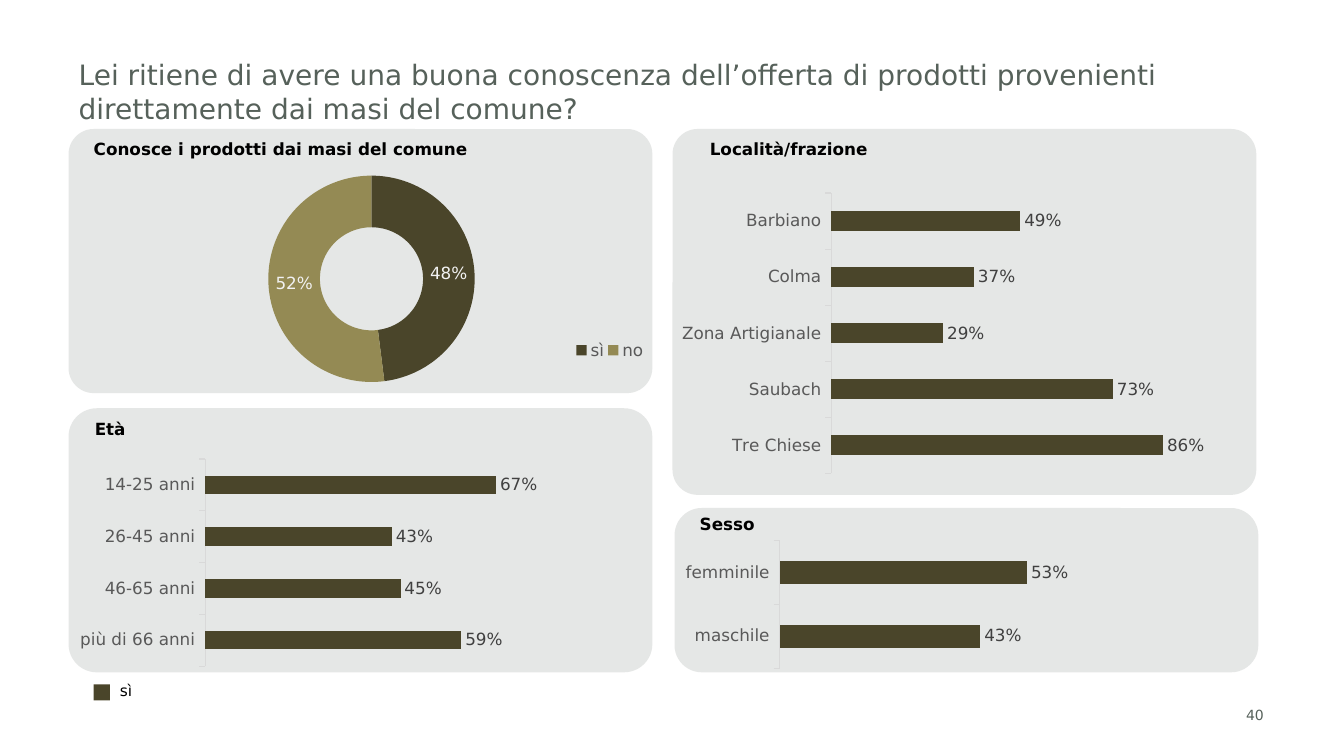
from dataclasses import dataclass

from lxml.etree import SubElement
from pptx import Presentation
from pptx.chart.data import CategoryChartData
from pptx.dml.color import RGBColor
from pptx.enum.chart import XL_CHART_TYPE as ChartType
from pptx.enum.chart import XL_LABEL_POSITION as LabelPosition
from pptx.enum.chart import XL_LEGEND_POSITION as LegendPosition
from pptx.enum.chart import XL_TICK_MARK as TickMark
from pptx.enum.shapes import MSO_SHAPE as Shape
from pptx.enum.text import MSO_ANCHOR as Anchor
from pptx.enum.text import MSO_AUTO_SIZE as AutoSize
from pptx.enum.text import PP_ALIGN as Align
from pptx.oxml import parse_xml
from pptx.oxml.ns import nsdecls, qn
from pptx.util import Inches, Pt


@dataclass(frozen=True)
class Theme:
    font: str = "DejaVu Sans"
    slate: str = "56615A"
    black: str = "000000"
    yes: str = "4A452A"
    no: str = "948A54"
    axis_text: str = "595959"
    axis_line: str = "D9D9D9"
    bar_label: str = "404040"
    ring_label: str = "F2F2F2"
    title_size: int = 20
    body_size: int = 12
    key_size: int = 11
    small_size: int = 10


THEME = Theme()


def style_font(font, size, color, bold=False):
    font.name = THEME.font
    font.size = Pt(size)
    font.bold = bold
    font.color.rgb = RGBColor.from_string(color)


def add_filled_shape(slide, kind, box, color):
    shape = slide.shapes.add_shape(kind, *map(Inches, box))
    shape.shadow.inherit = False
    shape.fill.solid()
    shape.fill.fore_color.rgb = RGBColor.from_string(color)
    shape.line.fill.background()
    return shape


def add_text(slide, box, text, size, color, bold=False, inset=True, wrap=True):
    text_box = slide.shapes.add_textbox(*map(Inches, box))
    frame = text_box.text_frame
    frame.word_wrap = wrap
    if not inset:
        frame.margin_left = frame.margin_right = 0
        frame.margin_top = frame.margin_bottom = 0
    frame.text = text
    style_font(frame.paragraphs[0].font, size, color, bold)
    return frame


def add_title(slide, box, text):
    title = slide.shapes.title
    title.left, title.top, title.width, title.height = map(Inches, box)
    frame = title.text_frame
    frame.text = text
    frame.word_wrap = True
    frame.auto_size = AutoSize.NONE
    frame.vertical_anchor = Anchor.TOP
    frame.paragraphs[0].alignment = Align.LEFT
    style_font(frame.paragraphs[0].font, THEME.title_size, THEME.slate)


def add_panel(slide, box, radius, heading, heading_offset):
    """Translucent rounded panel with a bold heading."""
    left, top, width, height = box
    panel = add_filled_shape(slide, Shape.ROUNDED_RECTANGLE, box, THEME.slate)
    panel.adjustments[0] = radius / height
    color = panel.fill._xPr.find(qn("a:solidFill"))[0]
    SubElement(color, qn("a:alpha")).set("val", "15000")
    dx, dy = heading_offset
    add_text(slide, (left + dx, top + dy, width - dx, 0.22), heading,
             THEME.body_size, THEME.black, bold=True, inset=False)


def set_layout(element, index, fractions, inner=False):
    """Place a plot area or legend by fractions of its chart."""
    for old in element.findall(qn("c:layout")):
        element.remove(old)
    target = '<c:layoutTarget val="inner"/>' if inner else ""
    modes = "".join(f'<c:{axis}Mode val="edge"/>' for axis in "xy")
    values = "".join(f'<c:{name} val="{value}"/>' for name, value in zip("xywh", fractions))
    element.insert(index, parse_xml(
        f'<c:layout {nsdecls("c")}><c:manualLayout>{target}{modes}{values}'
        "</c:manualLayout></c:layout>"))


def add_percent_chart(slide, kind, box, values, plot_layout, label_color):
    data = CategoryChartData(number_format="0%")
    data.categories = list(values)
    data.add_series("Series 1", list(values.values()))
    chart = slide.shapes.add_chart(kind, *map(Inches, box), data).chart
    chart.has_title = False
    chart.has_legend = False
    style_font(chart.font, THEME.small_size, THEME.black)
    set_layout(chart._chartSpace.chart.plotArea, 0, plot_layout, inner=True)
    plot = chart.plots[0]
    plot.has_data_labels = True
    labels = plot.data_labels
    labels.show_value = True
    labels.show_percentage = False
    labels.number_format = "0%"
    labels.number_format_is_linked = False
    style_font(labels.font, THEME.body_size, label_color)
    return chart


def add_ring(slide, box, values, plot_layout, legend_layout):
    chart = add_percent_chart(slide, ChartType.DOUGHNUT, box, values,
                              plot_layout, THEME.ring_label)
    series = chart.plots[0].series[0]
    for index, color in enumerate((THEME.yes, THEME.no)):
        fill = series.points[index].format.fill
        fill.solid()
        fill.fore_color.rgb = RGBColor.from_string(color)
    chart.has_legend = True
    legend = chart.legend
    legend.position = LegendPosition.RIGHT
    legend.include_in_layout = False
    style_font(legend.font, THEME.body_size, THEME.axis_text)
    set_layout(legend._element, 1, legend_layout)


def add_bars(slide, box, values, plot_layout):
    chart = add_percent_chart(slide, ChartType.BAR_CLUSTERED, box, values,
                              plot_layout, THEME.bar_label)
    plot = chart.plots[0]
    plot.gap_width = 182
    plot.vary_by_categories = False
    plot.data_labels.position = LabelPosition.OUTSIDE_END
    fill = plot.series[0].format.fill
    fill.solid()
    fill.fore_color.rgb = RGBColor.from_string(THEME.yes)
    # Axes
    chart.value_axis.minimum_scale = 0
    chart.value_axis.maximum_scale = 1
    chart.value_axis.has_major_gridlines = False
    chart.value_axis.visible = False
    axis = chart.category_axis
    axis.major_tick_mark = TickMark.OUTSIDE
    axis.minor_tick_mark = TickMark.NONE
    axis.format.line.color.rgb = RGBColor.from_string(THEME.axis_line)
    axis.format.line.width = Pt(0.75)
    style_font(axis.tick_labels.font, THEME.body_size, THEME.axis_text)


def add_key(slide, left, top, text):
    side = 0.16
    add_filled_shape(slide, Shape.RECTANGLE, (left, top, side, side), THEME.yes)
    add_text(slide, (left + side, top - 0.08, 0.32, 0.29), text,
             THEME.key_size, THEME.black, wrap=False)


def main():
    presentation = Presentation()
    presentation.slide_width = Inches(13.33)
    presentation.slide_height = Inches(7.5)
    slide = presentation.slides.add_slide(presentation.slide_layouts[5])
    add_title(slide, (0.68, 0.52, 11.44, 0.76),
              "Lei ritiene di avere una buona conoscenza dell’offerta di prodotti "
              "provenienti direttamente dai masi del comune?")

    # Overall awareness
    add_panel(slide, (0.68, 1.28, 5.79, 2.62), 0.25,
              "Conosce i prodotti dai masi del comune", (0.25, 0.1))
    add_ring(slide, (0.74, 1.52, 5.74, 2.37), {"sì": 0.48, "no": 0.52},
             (0.135, 0.094, 0.756, 0.864), (0.86, 0.77, 0.13, 0.11))

    # Breakdown by place, age and sex, listed from the bottom bar up
    add_panel(slide, (6.67, 1.28, 5.79, 3.63), 0.25, "Località/frazione", (0.37, 0.1))
    add_bars(slide, (6.67, 1.7, 5.79, 3.21),
             {"Tre Chiese": 0.86, "Saubach": 0.73, "Zona Artigianale": 0.29,
              "Colma": 0.37, "Barbiano": 0.49}, (0.272, 0.067, 0.661, 0.867))
    add_panel(slide, (0.68, 4.05, 5.79, 2.62), 0.28, "Età", (0.26, 0.1))
    add_bars(slide, (0.68, 4.52, 5.79, 2.14),
             {"più di 66 anni": 0.59, "46-65 anni": 0.45, "26-45 anni": 0.43,
              "14-25 anni": 0.67}, (0.234, 0.016, 0.744, 0.96))
    add_panel(slide, (6.69, 5.04, 5.79, 1.63), 0.27, "Sesso", (0.25, 0.06))
    add_bars(slide, (6.69, 5.32, 5.79, 1.33), {"maschile": 0.43, "femminile": 0.53},
             (0.18, 0.03, 0.8, 0.955))

    # Key and slide number
    add_key(slide, 0.93, 6.79, "sì")
    number = add_text(slide, (12.26, 6.9, 0.72, 0.38), "40", THEME.small_size, THEME.slate)
    number.vertical_anchor = Anchor.MIDDLE
    presentation.save("out.pptx")


if __name__ == "__main__":
    main()
